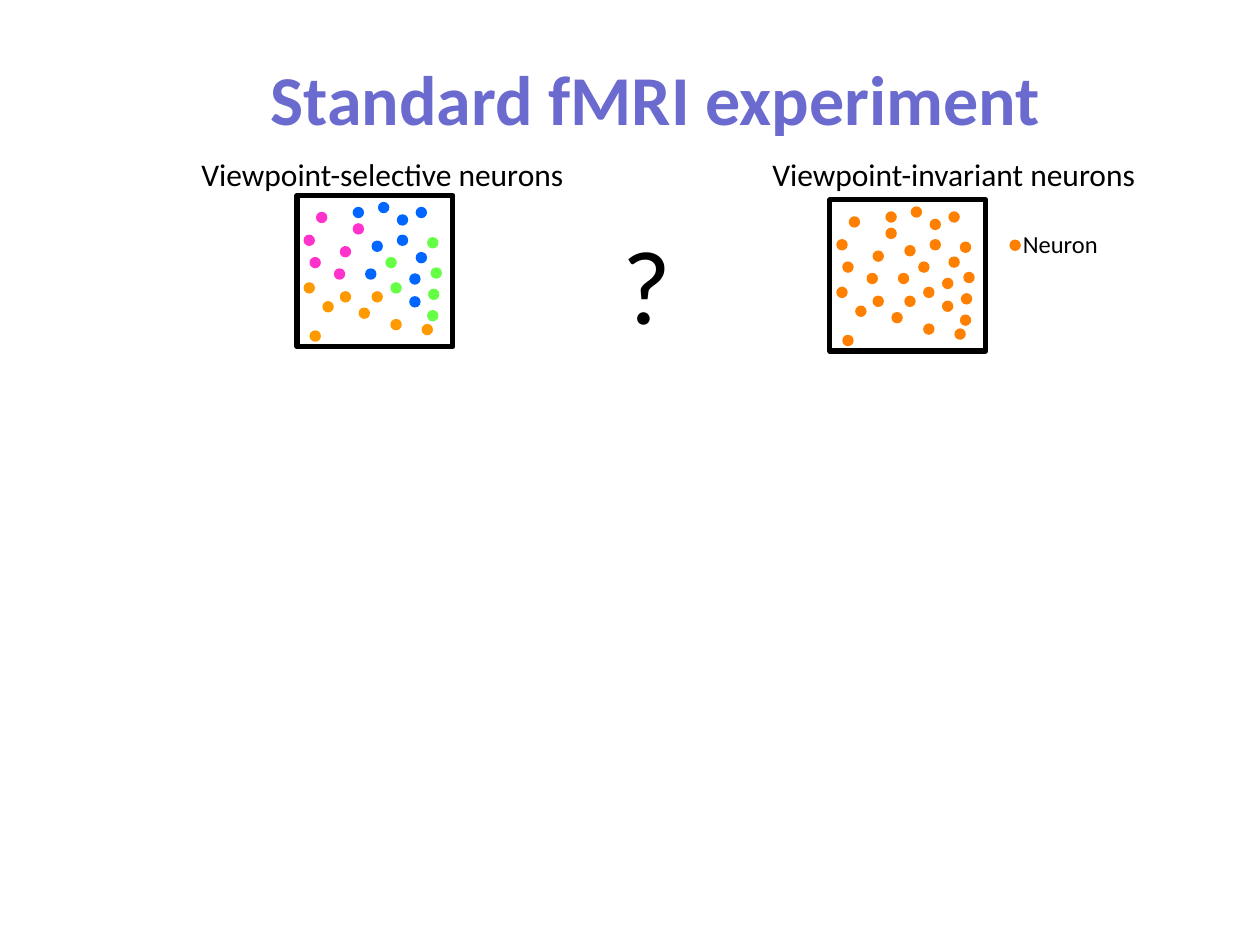
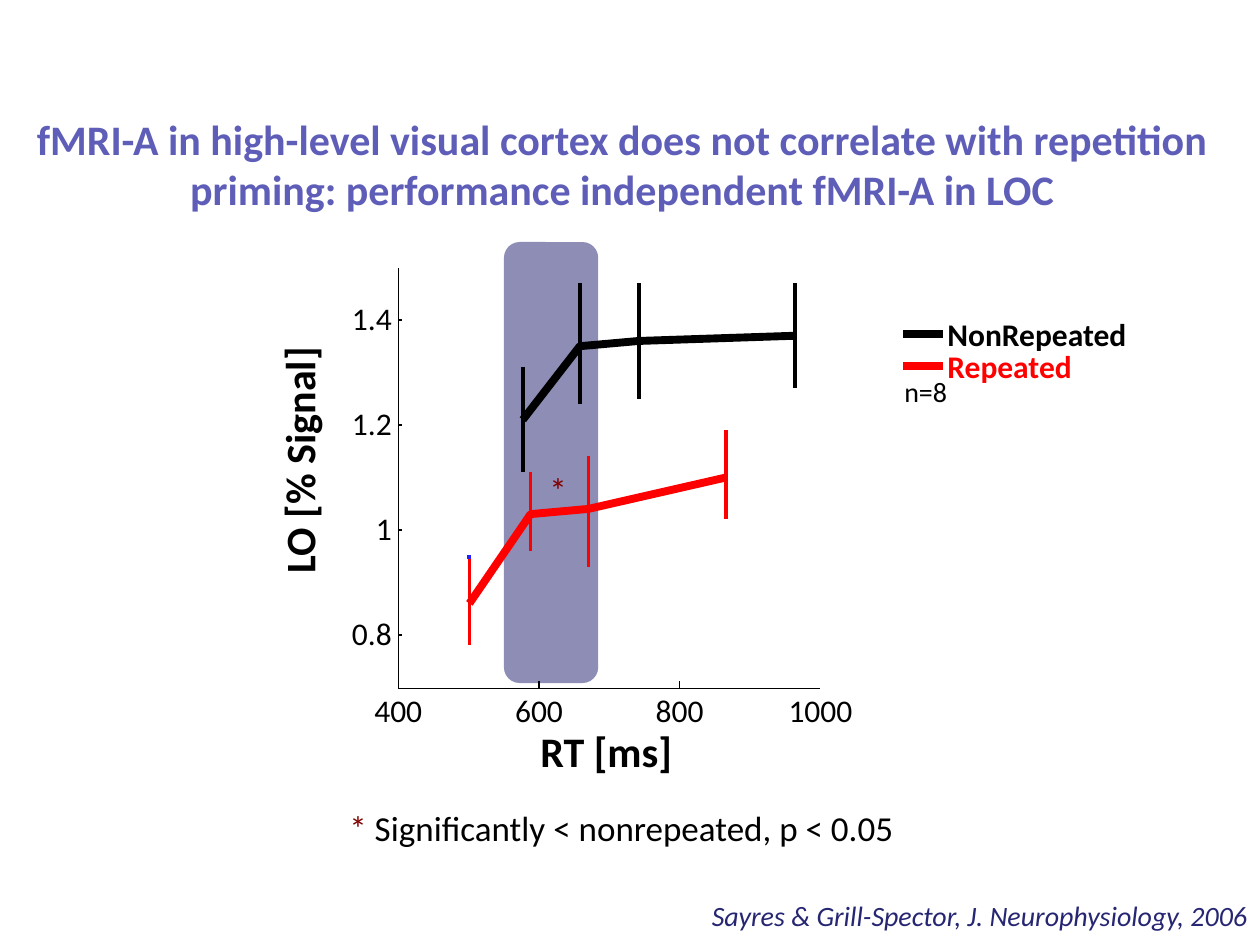
from lxml import etree
from pptx import Presentation, util as u
from pptx.dml.color import RGBColor
from pptx.enum import shapes as kinds, text as txt
from pptx.oxml.ns import qn

BLACK = RGBColor(0x00, 0x00, 0x00)
WHITE = RGBColor(0xFF, 0xFF, 0xFF)
RED = RGBColor(0xFF, 0x00, 0x00)
MAROON = RGBColor(0x80, 0x00, 0x00)
NAVY = RGBColor(0x26, 0x26, 0x73)
VIOLET = RGBColor(0x6B, 0x6B, 0xCF)
PURPLE = RGBColor(0x5E, 0x5E, 0xB9)
BLUE = RGBColor(0x00, 0x66, 0xFF)
BRIGHT = RGBColor(0x22, 0x22, 0xFF)
PINK = RGBColor(0xFF, 0x33, 0xCC)
AMBER = RGBColor(0xFF, 0x99, 0x00)
GREEN = RGBColor(0x65, 0xFF, 0x46)
ORANGE = RGBColor(0xFF, 0x80, 0x00)

FONT = "Calibri"
LEFT, CENTER, RIGHT = (txt.PP_ALIGN.LEFT, txt.PP_ALIGN.CENTER, txt.PP_ALIGN.RIGHT)
FLUSH = (0, 0, 0, 0)
SLIM = (0.1, 0, 0.1, 0)
ROOMY = (0.25, 0.13, 0.25, 0.13)
DOT = 0.23

NEURONS = {
    BLUE: [(1.37, 1.47), (2.26, 2.03), (1.12, 0.23), (2.39, 1.14), (1.5, 0.91),
           (2.01, 0.79), (1.63, 0.13), (2.01, 0.38), (2.39, 0.23), (2.26, 1.57)],
    PINK: [(1.12, 0.56), (0.13, 0.79), (0.86, 1.02), (0.38, 0.33), (0.74, 1.47),
           (0.25, 1.24)],
    AMBER: [(0.51, 2.13), (1.5, 1.93), (1.88, 2.49), (0.13, 1.75), (0.86, 1.93),
            (0.25, 2.72), (2.51, 2.59), (1.24, 2.26)],
    GREEN: [(2.62, 0.84), (2.69, 1.45), (1.78, 1.24), (1.88, 1.75), (2.64, 1.88),
            (2.62, 2.31)],
}

AXIS_X, AXIS_Y = 8.03, 13.88
SERIES = [
    ("NonRepeated", BLACK, [(577, 1.21, 1.11, 1.31), (658, 1.35, 1.24, 1.47),
                            (742, 1.36, 1.25, 1.47), (964, 1.37, 1.27, 1.47)]),
    ("Repeated", RED, [(501, 0.86, 0.78, 0.95), (588, 1.03, 0.96, 1.11),
                       (670, 1.04, 0.93, 1.14), (866, 1.1, 1.02, 1.19)]),
]


def apply(item, form):
    for name, value in form.items():
        setattr(item, name, value)


def place(item, box):
    apply(item, dict(zip(("left", "top", "width", "height"), map(u.Cm, box))))


def write(item, runs, size, inset=FLUSH, align=LEFT, anchor=txt.MSO_ANCHOR.TOP,
          space=1.0, **form):
    frame = item.text_frame
    sides = ("margin_left", "margin_top", "margin_right", "margin_bottom")
    apply(frame, dict(zip(sides, map(u.Cm, inset))))
    apply(frame, {"word_wrap": True, "auto_size": txt.MSO_AUTO_SIZE.NONE,
                  "vertical_anchor": anchor})
    para = frame.paragraphs[0]
    apply(para, {"alignment": align, "line_spacing": space})
    for words, color in runs:
        run = para.add_run()
        run.text = words
        apply(run.font, {"name": FONT, "size": u.Pt(size), **form})
        run.font.color.rgb = color


def label(group, box, words, size, color=BLACK, **form):
    note(group, box, [(words, color)], size, **form)


def note(group, box, runs, size, turn=0, **form):
    item = group.add_textbox(*map(u.Cm, box))
    item.rotation = turn
    write(item, runs, size, **form)


def title(slide, box, words, size, color, **form):
    item = slide.shapes.title
    place(item, box)
    write(item, [(words, color)], size, align=CENTER, bold=True, **form)


def solid(group, kind, box, fill, edge=None):
    item = group.add_shape(kind, *map(u.Cm, box))
    item.shadow.inherit = False
    item.fill.solid()
    item.fill.fore_color.rgb = fill
    if edge:
        item.line.color.rgb = edge
        item.line.width = u.Pt(3)
    else:
        item.line.fill.background()
    return item


def line(group, start, end, color=BLACK, width=0.75):
    item = group.add_connector(kinds.MSO_CONNECTOR.STRAIGHT,
                               *map(u.Cm, (*start, *end)))
    item.line.color.rgb = color
    item.line.width = u.Pt(width)
    etree.SubElement(item._element.spPr, qn("a:effectLst"))


def curve(group, points, color):
    spots = [(u.Cm(x), u.Cm(y)) for x, y in points]
    draft = group.build_freeform(*spots[0])
    draft.add_line_segments(spots[1:], close=False)
    item = draft.convert_to_shape()
    item.shadow.inherit = False
    item.fill.background()
    item.line.color.rgb = color
    item.line.width = u.Pt(4.5)


def dot(group, x, y, color):
    solid(group, kinds.MSO_SHAPE.OVAL, (x, y, DOT, DOT), color)


def voxel(group, left, top, tint=None):
    solid(group, kinds.MSO_SHAPE.RECTANGLE, (left, top, 3.14, 3.05), WHITE, BLACK)
    for color, spots in NEURONS.items():
        for x, y in spots:
            dot(group, left + x, top + y, tint or color)


def map_x(time):
    return AXIS_X + (time - 400) * 8.51 / 600


def map_y(signal):
    return 12.8 - (signal - 0.8) * 6.35 / 0.6


def axes(group):
    line(group, (AXIS_X, AXIS_Y), (map_x(1000), AXIS_Y))
    line(group, (AXIS_X, AXIS_Y), (AXIS_X, 5.41))
    for time in (400, 600, 800, 1000):
        x = map_x(time)
        if time < 1000:
            line(group, (x, AXIS_Y), (x, AXIS_Y - 0.15))
        label(group, (x - 0.8, 14, 1.6, 0.74), str(time), 18,
              align=CENTER, space=0.93)
    for signal in (0.8, 1, 1.2, 1.4):
        y = map_y(signal)
        line(group, (AXIS_X, y), (AXIS_X + 0.08, y))
        label(group, (6.5, y - 0.36, 1.4, 0.74), str(signal), 18,
              align=RIGHT, space=0.93)
    names = {"align": CENTER, "space": 0.93, "bold": True}
    label(group, (10.72, 14.71, 3, 0.97), "RT [ms]", 24, **names)
    label(group, (3.59, 8.79, 5, 0.97), "LO [% Signal]", 24, turn=270, **names)


def plot(group, color, data):
    for time, mean, low, high in data:
        x = map_x(time)
        line(group, (x, map_y(high)), (x, map_y(low)), color, 2)
    curve(group, [(map_x(row[0]), map_y(row[1])) for row in data], color)


def legend(group):
    for rank, (name, color, data) in enumerate(SERIES):
        y = 6.73 + rank * 0.64
        line(group, (18.21, y), (19, y), color, 4.5)
        label(group, (19.1, y - 0.38, 4, 0.79), name, 18, color, bold=True)


def neurons(deck):
    slide = deck.slides.add_slide(deck.slide_layouts[5])
    shapes = slide.shapes
    title(slide, (0.51, 1.12, 25.4, 1.7), "Standard fMRI experiment", 40, VIOLET,
          inset=SLIM)
    label(shapes, (12.45, 4.42, 1.52, 2.51), "?", 60, inset=SLIM)
    for left, kind in ((15.47, "invariant"), (3.96, "selective")):
        label(shapes, (left, 3.12, 8.31, 0.81), f"Viewpoint-{kind} neurons", 18,
              inset=SLIM)
    voxel(shapes.add_group_shape().shapes, 5.99, 3.94)
    same = shapes.add_group_shape().shapes
    voxel(same, 16.73, 4.03, ORANGE)
    dot(same, 20.35, 4.83, ORANGE)
    label(same, (20.52, 4.62, 1.98, 0.81), "Neuron", 14, inset=SLIM)


def priming(deck):
    slide = deck.slides.add_slide(deck.slide_layouts[5])
    shapes = slide.shapes
    band = solid(shapes, kinds.MSO_SHAPE.ROUNDED_RECTANGLE,
                 (10.16, 4.88, 1.9, 8.89), NAVY)
    tint = band._element.spPr.find(".//" + qn("a:srgbClr"))
    etree.SubElement(tint, qn("a:alpha"), val="52000")
    title(slide, (-0.2, 1.07, 25.6, 4.45),
          "fMRI-A in high-level visual cortex does not correlate with repetition "
          "priming: performance independent fMRI-A in LOC", 24, PURPLE,
          inset=(0.25, 0.15, 0.36, 0.15), anchor=txt.MSO_ANCHOR.MIDDLE)
    axes(shapes)
    for name, color, data in SERIES:
        plot(shapes, color, data)
    line(shapes, (9.42, 11.23), (9.5, 11.23), BRIGHT, 2)
    legend(shapes.add_group_shape().shapes)
    label(shapes, (17.98, 7.42, 1.8, 0.94), "n=8", 16, inset=ROOMY)
    stars = {"align": CENTER, "space": 0.93}
    label(shapes, (10.95, 9.53, 0.6, 0.81), "*", 20, MAROON, **stars)
    note(shapes, (6.53, 16.33, 12, 0.81),
         [("*", MAROON), (" Significantly < nonrepeated, p < 0.05", BLACK)], 20,
         **stars)
    label(shapes, (11.86, 17.98, 13.54, 0.94),
          "Sayres & Grill-Spector, J. Neurophysiology, 2006", 16, NAVY,
          inset=ROOMY, align=RIGHT, italic=True)


def main():
    deck = Presentation()
    apply(deck, {"slide_width": u.Cm(25.4), "slide_height": u.Cm(19.05)})
    neurons(deck)
    priming(deck)
    deck.save("out.pptx")


if __name__ == "__main__":
    main()
